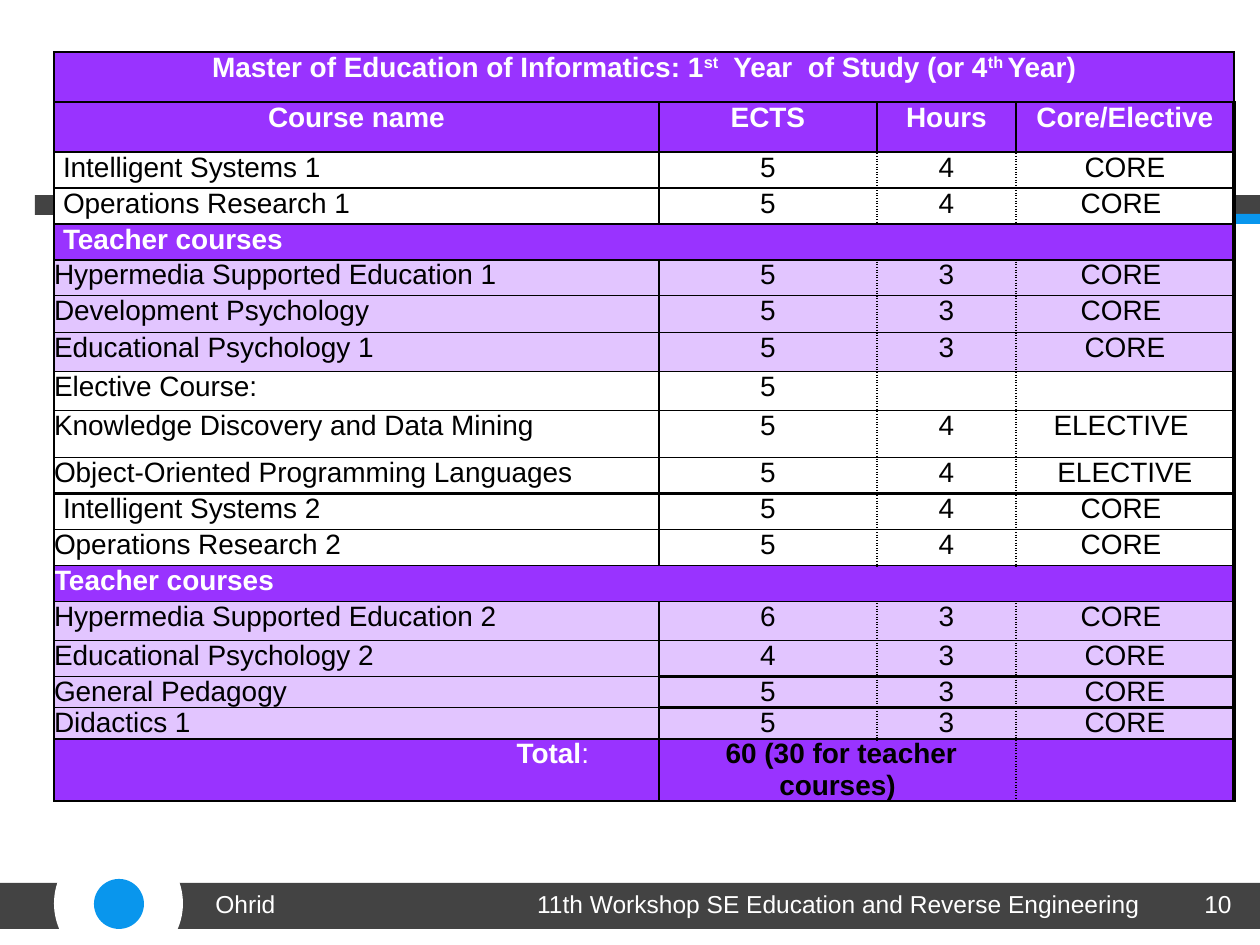
import pptx
import pptx.util
import pptx.dml.color
import pptx.enum.shapes
import pptx.enum.text
import pptx.oxml.ns
import lxml.etree

PX = 914400 // 126
SHAPE = pptx.enum.shapes.MSO_SHAPE
ALIGN = pptx.enum.text.PP_ALIGN
PURPLE, LILAC, WHITE, BLACK = "9933FF", "E2C5FF", "FFFFFF", "000000"
GREY, BLUE = "434343", "0996ED"

# Slide furniture: shape, colour, left, top, width, height
DECORATION = [
    (SHAPE.RECTANGLE, GREY, 174, 883, 1086, 46),
    (SHAPE.RECTANGLE, GREY, 0, 883, 64, 46),
    (SHAPE.OVAL, WHITE, 54, 839, 129, 129),
    (SHAPE.OVAL, BLUE, 94, 879, 50, 50),
    (SHAPE.RECTANGLE, GREY, 35, 195, 1225, 20),
    (SHAPE.RECTANGLE, BLUE, 54, 214, 1206, 10),
]
# Footer: text, left, width, alignment
FOOTER = [
    ("10", 1176, 68, ALIGN.RIGHT),
    ("Ohrid", 203, 348, ALIGN.LEFT),
    ("11th Workshop SE Education and Reverse Engineering", 501, 675, ALIGN.CENTER),
]

# Table: kind of row, height, side padding, cells
TITLE = [("Master of Education of Informatics: 1", {}), ("st", {"baseline": 30}),
         ("  Year  of Study (or 4", {}), ("th ", {"baseline": 30}), ("Year)", {})]
ROWS = [
    ("title", 50, 9, [TITLE]),
    ("header", 50, 9, ["Course name", "ECTS", "Hours", "Core/Elective"]),
    ("plain", 36, 9, ["Intelligent Systems 1", "5", "4", "CORE"]),
    ("plain", 36, 9, ["Operations Research 1", "5", "4", "CORE "]),
    ("section", 36, 9, ["Teacher courses"]),
    ("teacher", 36, 0, ["Hypermedia Supported Education 1", "5", "3", "CORE "]),
    ("teacher", 37, 0, ["Development Psychology", "5", "3", "CORE "]),
    ("teacher", 39, 0, ["Educational Psychology 1", "5", "3", "CORE"]),
    ("plain", 39, 0, ["Elective Course:", "5", "", ""]),
    ("plain", 47, 0, ["Knowledge Discovery and Data Mining", "5", "4", "ELECTIVE "]),
    ("plain", 36, 0, ["Object-Oriented Programming Languages", "5", "4", "ELECTIVE"]),
    ("plain", 36, 9, ["Intelligent Systems 2", "5", "4", "CORE "]),
    ("plain", 36, 0, ["Operations Research 2", "5", "4", "CORE "]),
    ("section", 36, 0, ["Teacher courses"]),
    ("teacher", 39, 0, ["Hypermedia Supported Education 2", "6", "3", "CORE "]),
    ("teacher", 36, 0, ["Educational Psychology 2", "4", "3", "CORE"]),
    ("teacher", 31, 0, ["General Pedagogy", "5", "3", "CORE"]),
    ("teacher", 31, 0, ["Didactics 1", "5", "3", "CORE"]),
    ("total", 62, 0, [[("Total", {"bold": True}), (":", {})],
                      " 60 (30 for teacher courses)", None, ""]),
]
COLUMNS = [605, 218, 139, 218]
FILLS = {"plain": WHITE, "teacher": LILAC}
TOTAL_INDENT = 70
# Weight of the rule above each row where it is not 1 pt
RULES = {2: 1.5, 11: 2.25, 16: 1.5, 17: 1.5, 18: 1.5, 19: 1.5}


def rgb(colour):
    return pptx.dml.color.RGBColor.from_string(colour)


def write(frame, text, size=16, colour=BLACK, bold=False, align=ALIGN.LEFT):
    paragraph = frame.paragraphs[0]
    paragraph.alignment = align
    pieces = [(text, {})] if isinstance(text, str) else text
    for piece, extra in pieces:
        if not piece:
            continue
        run = paragraph.add_run()
        run.text = piece
        run.font.name = "Arial"
        run.font.size = pptx.util.Pt(size)
        run.font.bold = extra.get("bold", bold)
        run.font.color.rgb = rgb(colour)
        if "baseline" in extra:
            run.font._element.set("baseline", str(extra["baseline"] * 1000))


def add_border(cell, side, weight, dash="solid"):
    properties = cell._tc.get_or_add_tcPr()
    qn = pptx.oxml.ns.qn
    line = lxml.etree.SubElement(properties, qn(f"a:ln{side}"),
                                 w=str(int(weight * 12700)))
    fill = lxml.etree.SubElement(line, qn("a:solidFill"))
    lxml.etree.SubElement(fill, qn("a:srgbClr"), val=BLACK)
    lxml.etree.SubElement(line, qn("a:prstDash"), val=dash)


def rule_weight(boundary, column):
    if column == 0 and boundary != 11:
        return 1
    return RULES.get(boundary, 1)


def upright(kind, edge):
    """Weight and dash of the vertical rule at a column edge."""
    if edge == len(COLUMNS):
        return (1 if kind == "title" else 2.25), "solid"
    return 1, ("sysDot" if edge > 1 and kind != "header" else "solid")


def text_format(kind, column):
    if kind in ("title", "header"):
        return dict(colour=WHITE, bold=True, align=ALIGN.CENTER)
    if kind == "section":
        return dict(colour=WHITE, bold=True, align=ALIGN.JUSTIFY)
    if kind == "total" and column == 0:
        return dict(colour=WHITE, align=ALIGN.RIGHT)
    return dict(bold=kind == "total", align=ALIGN.CENTER if column else ALIGN.LEFT)


def add_courses(slide):
    heights = [row[1] for row in ROWS]
    table = slide.shapes.add_table(
        len(ROWS), len(COLUMNS), 54 * PX, 52 * PX,
        sum(COLUMNS) * PX, sum(heights) * PX).table
    table.first_row = table.horz_banding = False
    for column, width in zip(table.columns, COLUMNS):
        column.width = width * PX
    last = len(COLUMNS) - 1
    for index, (kind, height, padding, texts) in enumerate(ROWS):
        table.rows[index].height = height * PX
        spans = {"title": (0, last), "section": (0, last), "total": (1, 2)}
        first, end = spans.get(kind, (0, 0))
        if end:
            table.cell(index, first).merge(table.cell(index, end))
        for column in range(len(COLUMNS)):
            cell = table.cell(index, column)
            right = end if cell.is_merge_origin else column
            cell.margin_left = cell.margin_right = padding * PX
            cell.margin_top = cell.margin_bottom = 0
            if kind == "total" and column == 0:
                cell.margin_right = TOTAL_INDENT * PX
            if not cell.is_spanned:
                add_border(cell, "L", *upright(kind, column))
            if not cell.is_spanned or column == end:
                add_border(cell, "R", *upright(kind, right + 1))
            add_border(cell, "T", rule_weight(index, column))
            add_border(cell, "B", rule_weight(index + 1, column))
            cell.fill.solid()
            cell.fill.fore_color.rgb = rgb(FILLS.get(kind, PURPLE))
            if not cell.is_spanned:
                write(cell.text_frame, texts[column], **text_format(kind, column))


def main():
    presentation = pptx.Presentation()
    presentation.slide_width, presentation.slide_height = 1260 * PX, 945 * PX
    slide = presentation.slides.add_slide(presentation.slide_layouts[6])

    # Bands and circles
    for preset, colour, *box in DECORATION:
        shape = slide.shapes.add_shape(preset, *(value * PX for value in box))
        shape.shadow.inherit = False
        shape.fill.solid()
        shape.fill.fore_color.rgb = rgb(colour)
        shape.line.fill.background()

    add_courses(slide)

    # Footer texts
    for text, left, width, align in FOOTER:
        box = slide.shapes.add_textbox(left * PX, 883 * PX, width * PX, 66 * PX)
        box.text_frame.word_wrap = True
        write(box.text_frame, text, size=14, colour=WHITE, align=align)

    presentation.save("out.pptx")


if __name__ == "__main__":
    main()
